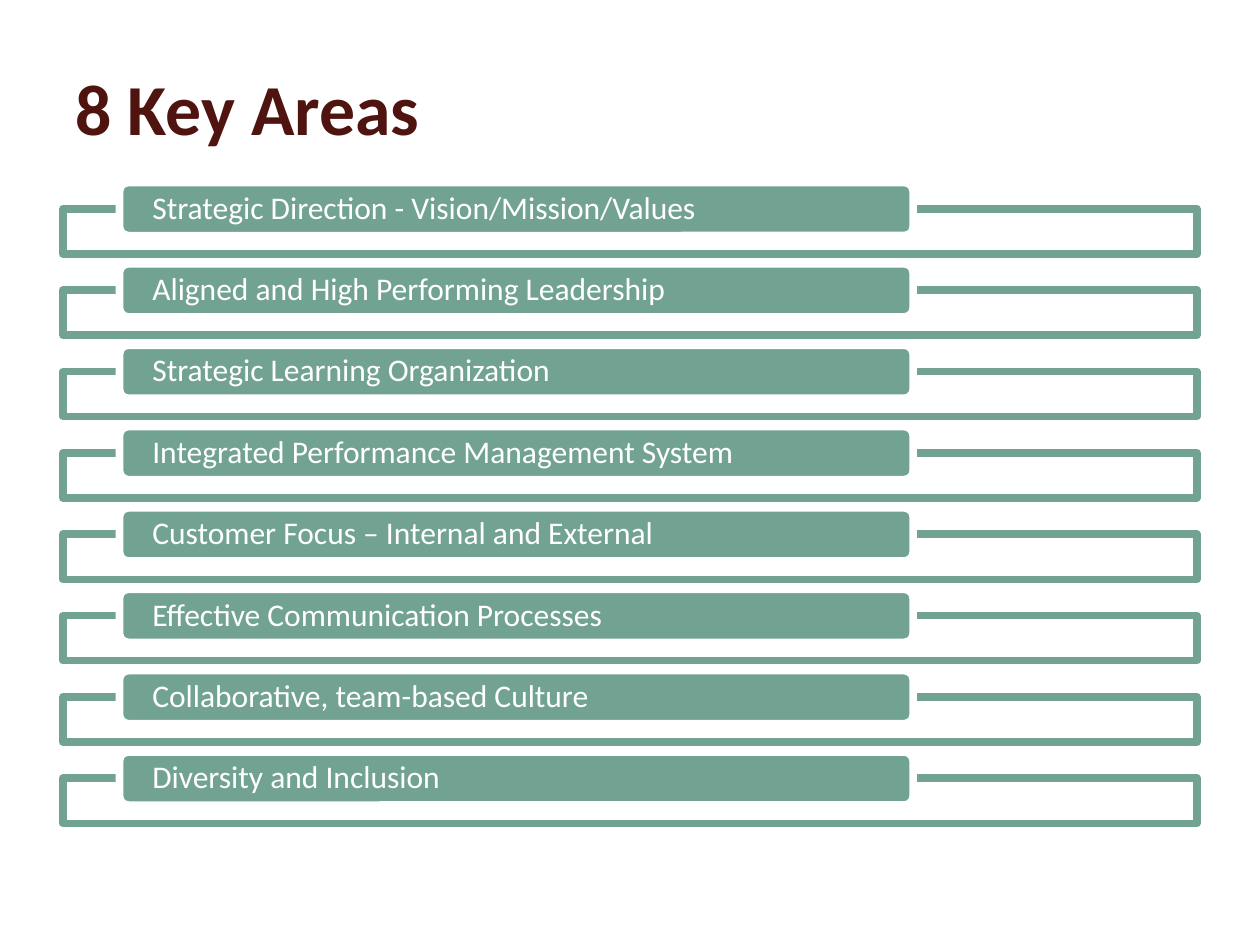
from pptx import Presentation
from pptx.dml.color import RGBColor as Rgb
from pptx.enum.shapes import MSO_SHAPE as Kind
from pptx.enum.text import MSO_ANCHOR as Anchor, PP_ALIGN as Align
from pptx.oxml.ns import qn
from pptx.util import Cm, Pt
from lxml.etree import SubElement as Sub

HUES = {"sage": "72A392", "white": "FFFFFF", "wine": "4F140F"}
AREAS = [
    "Strategic Direction - Vision/Mission/Values",
    "Aligned and High Performing Leadership",
    "Strategic Learning Organization",
    "Integrated Performance Management System",
    "Customer Focus – Internal and External",
    "Effective Communication Processes",
    "Collaborative, team-based Culture",
    "Diversity and Inclusion",
]
LEFT, WIDE = 1.27, 22.86
TOP, STEP = 3.68, 1.64
DROP = 0.53


def hue(name):
    return Rgb.from_string(HUES[name])


def apply(item, form):
    for key, value in form.items():
        setattr(item, key, value)


def add_text(shape, text, ink, font, frame, para):
    body = shape.text_frame
    apply(body, {"word_wrap": True, "vertical_anchor": Anchor.MIDDLE, **frame})
    line = body.paragraphs[0]
    apply(line, {"alignment": Align.LEFT, **para})
    run = line.add_run()
    run.text = text
    apply(run.font, {"name": "Calibri", **font})
    run.font.color.rgb = hue(ink)


def add_box(slide, kind, place, fill, edge):
    box = slide.shapes.add_shape(kind, *map(Cm, place))
    box.shadow.inherit = False
    box.fill.solid()
    box.fill.fore_color.rgb = hue(fill)
    box.line.color.rgb = hue(edge)
    box.line.width = Pt(4.33)
    return box


def add_frame(slide, top):
    box = add_box(slide, Kind.RECTANGLE, (LEFT, top, WIDE, 0.91), "white", "sage")
    tone = box.fill._xPr.find(qn("a:solidFill"))[0]
    Sub(tone, qn("a:alpha"), val="90000")
    Sub(box.line._get_or_add_ln(), qn("a:round"))


def add_bar(slide, top, text):
    bar = add_box(slide, Kind.ROUNDED_RECTANGLE, (2.41, top, 16, 1.07), "sage", "white")
    frame = {"margin_left": Cm(0.61), "margin_right": Cm(0.61),
             "margin_top": 0, "margin_bottom": 0}
    add_text(bar, text, "white", {"size": Pt(18)}, frame, {"line_spacing": 0.9})


def add_title(slide, text):
    box = slide.shapes.add_textbox(*map(Cm, (LEFT, 0.56, WIDE, 3.18)))
    add_text(box, text, "wine", {"size": Pt(41), "bold": True}, {}, {})


def main():
    deck = Presentation()
    apply(deck, {"slide_width": Cm(25.4), "slide_height": Cm(19.05)})
    slide = deck.slides.add_slide(deck.slide_layouts[6])
    for row, area in enumerate(AREAS):
        top = TOP + row * STEP
        add_frame(slide, top + DROP)
        add_bar(slide, top, area)
    add_title(slide, "8 Key Areas")
    deck.save("out.pptx")


if __name__ == "__main__":
    main()
